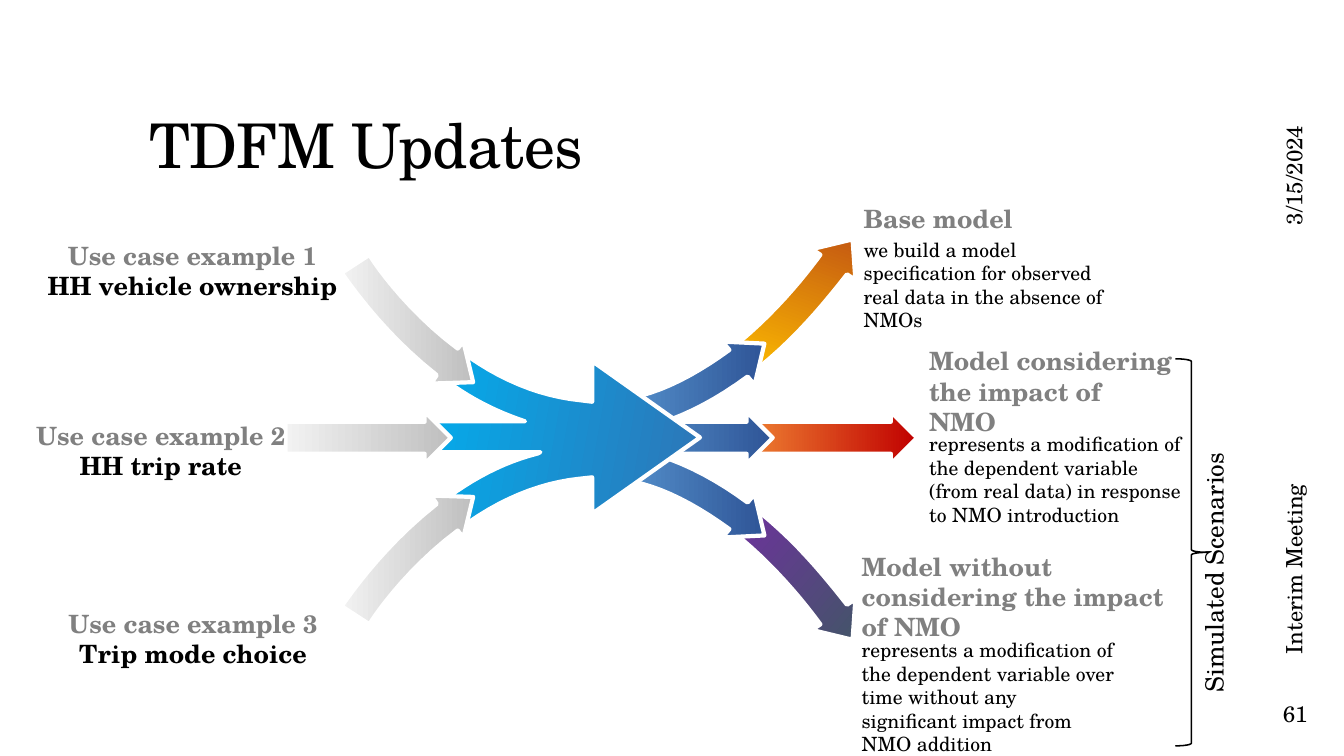
from pptx import Presentation
from pptx import util as u
from pptx.dml.color import RGBColor
from pptx.enum import shapes, text

FONT = "TeX Gyre Schola"
BLACK, GREY, WHITE = "000000", "808080", "FFFFFF"
MIRROR_SUM = 628
CURVE_STEPS = 12
ARROW_TOP, ARROW_HEIGHT = 294, 37.4

ORANGE = ("C55A11", "FFC000")
PURPLE = ("44546A", "7030A0")
RED = ("C00000", "ED7D31")
BLUE = ("2F5597", "5B9BD5")
CENTER = ("2E75B6", "00B0F0")
SILVER = ("BFBFBF", "F2F2F2")

# Two numbers make a line, six make a Bezier curve.
OUTER = [(611, 200), (609, 171), (580, 178), (586, 182),
         (575, 197, 552, 226, 521, 250), (535, 268),
         (567, 244, 590, 215, 605, 196)]
BRANCH = [(516, 244), (546, 245.5), (539, 275), (534, 269),
          (503, 292, 471, 306, 440, 309), (428, 310), (428, 287), (438, 286),
          (465, 284, 492, 271, 521, 250)]
INPUT = [(338, 273), (331, 244), (327, 249),
         (288, 220, 264, 183, 264, 182), (244, 195),
         (246, 197, 270, 235, 312, 268), (308, 274)]
HUB = [(328, 250), (356, 271, 385, 283, 415, 286), (423, 287), (423, 258),
       (500, 312.5), (423, 367), (423, 341), (414, 342),
       (385, 345, 356, 357, 328, 378), (315, 359),
       (337, 342, 360, 330, 384, 324), (386, 323), (291, 323), (291, 301),
       (375, 301), (354, 294, 334, 284, 315, 269)]


def mirrored(outline):
    return [tuple(MIRROR_SUM - value if index % 2 else value
                  for index, value in enumerate(step)) for step in outline]


FLOW = [
    ("arrow", (537, 118), RED, 180),
    ("outline", OUTER, ORANGE, 110),
    ("outline", mirrored(OUTER), PURPLE, 220),
    ("arrow", (430, 122), BLUE, 180),
    ("outline", BRANCH, BLUE, 180),
    ("outline", mirrored(BRANCH), BLUE, 180),
    ("outline", HUB, CENTER, 190),
    ("outline", INPUT, SILVER, 180),
    ("arrow", (204, 118), SILVER, 180),
    ("outline", mirrored(INPUT), SILVER, 180),
]

USE_CASES = [
    ((25.2, 167.8, 224.6, 51.1), "Use case example 1", "HH vehicle ownership"),
    ((17.3, 296.6, 195.1, 51.1), "Use case example 2", "HH trip rate"),
    ((40.3, 430.6, 195.1, 51.1), "Use case example 3", "Trip mode choice"),
]
MODELS = [
    ((609.8, 141.8, 122.4, 28.8), ["Base model"], (166.3, 74.9),
     "we build a model specification for observed real data in the absence of NMOs"),
    ((656.6, 243.4, 189.4, 72.7), ["Model considering the impact of NMO"], (305.3, 74.9),
     "represents a modification of the dependent variable (from real data) "
     "in response to NMO introduction"),
    ((608.4, 390.2, 237.6, 72.7), ["Model without", "considering the impact", "of NMO"],
     (452.2, 92.2),
     "represents a modification of the dependent variable over time without any "
     "significant impact from NMO addition"),
]
MODEL_TEXT_WIDTH = 195.8
SIDE_LABELS = [
    ((850.3, 78.5, 149.8, 28.8), "3/15/2024", 16),
    ((784.1, 319, 282.2, 28.8), "Interim Meeting", 16),
    ((768.6, 382, 203.8, 36), "Simulated Scenarios", 18),
]
BRACE = (839.5, 256.3, 23, 276.5)


def color(value):
    return RGBColor.from_string(value)


def points(values):
    return [u.Pt(value) for value in values]


def add_text(slide, box, lines, size, colors=(BLACK,), rotation=0, spacing=None,
             bold=False, align=text.PP_ALIGN.LEFT, anchor=text.MSO_ANCHOR.TOP, wrap=True):
    shape = slide.shapes.add_textbox(*points(box))
    shape.rotation = rotation
    frame = shape.text_frame
    frame.word_wrap, frame.vertical_anchor = wrap, anchor
    for index, line in enumerate(lines):
        paragraph = frame.paragraphs[0] if index == 0 else frame.add_paragraph()
        paragraph.alignment, paragraph.line_spacing = align, spacing
        run = paragraph.add_run()
        run.text = line
        for name, value in {"name": FONT, "size": u.Pt(size), "bold": bold}.items():
            setattr(run.font, name, value)
        run.font.color.rgb = color(colors[index % len(colors)])
    return shape


def outline_vertices(outline):
    vertices = [outline[0]]
    for step in outline[1:]:
        if len(step) == 2:
            vertices.append(step)
            continue
        controls = [vertices[-1], step[:2], step[2:4], step[4:]]
        for index in range(1, CURVE_STEPS + 1):
            t = index / CURVE_STEPS
            weights = ((1 - t) ** 3, 3 * t * (1 - t) ** 2, 3 * t * t * (1 - t), t ** 3)
            vertices.append(tuple(sum(weight * control[axis]
                                      for weight, control in zip(weights, controls))
                                  for axis in (0, 1)))
    return [points(vertex) for vertex in vertices]


def add_flow(slide, kind, geometry, stops, angle):
    if kind == "arrow":
        left, width = geometry
        shape = slide.shapes.add_shape(shapes.MSO_SHAPE.RIGHT_ARROW,
                                       *points((left, ARROW_TOP, width, ARROW_HEIGHT)))
        shape.adjustments[0] = 0.61
    else:
        start, *others = outline_vertices(geometry)
        builder = slide.shapes.build_freeform(*start)
        builder.add_line_segments(others, close=True)
        shape = builder.convert_to_shape()
    shape.shadow.inherit = False
    shape.fill.gradient()
    shape.fill.gradient_angle = 360 - angle
    for position, (stop, value) in enumerate(zip(shape.fill.gradient_stops, stops)):
        stop.position = position
        stop.color.rgb = color(value)
    shape.line.color.rgb = color(WHITE)
    shape.line.width = u.Pt(3)


def main():
    presentation = Presentation()
    presentation.slide_width, presentation.slide_height = u.Pt(960), u.Pt(540)
    slide = presentation.slides.add_slide(presentation.slide_layouts[6])

    title = add_text(slide, (99.4, 28.8, 763.2, 104.4), ["TDFM Updates"], 44,
                     spacing=0.9, anchor=text.MSO_ANCHOR.BOTTOM)
    title.element.xpath(".//a:rPr")[0].set("spc", "-50")
    number = add_text(slide, (889.2, 486, 72, 46.8), ["61"], 16,
                      align=text.PP_ALIGN.CENTER, anchor=text.MSO_ANCHOR.MIDDLE)
    for side in ("left", "right", "top", "bottom"):
        setattr(number.text_frame, f"margin_{side}", u.Pt(3.6))

    for part in FLOW:
        add_flow(slide, *part)

    for box, heading, detail in USE_CASES:
        add_text(slide, box, [heading, detail], 18, (GREY, BLACK), bold=True,
                 align=text.PP_ALIGN.CENTER, wrap=False)
    for box, heading, (top, height), detail in MODELS:
        add_text(slide, box, heading, 18, (GREY,), bold=True)
        add_text(slide, (box[0], top, MODEL_TEXT_WIDTH, height), [detail], 14)

    brace = slide.shapes.add_shape(shapes.MSO_SHAPE.RIGHT_BRACE, *points(BRACE))
    brace.shadow.inherit = False
    brace.fill.background()
    brace.line.color.rgb = color(BLACK)
    brace.line.width = u.Pt(1.1)
    for box, label, size in SIDE_LABELS:
        add_text(slide, box, [label], size, rotation=270)

    presentation.save("out.pptx")


if __name__ == "__main__":
    main()
